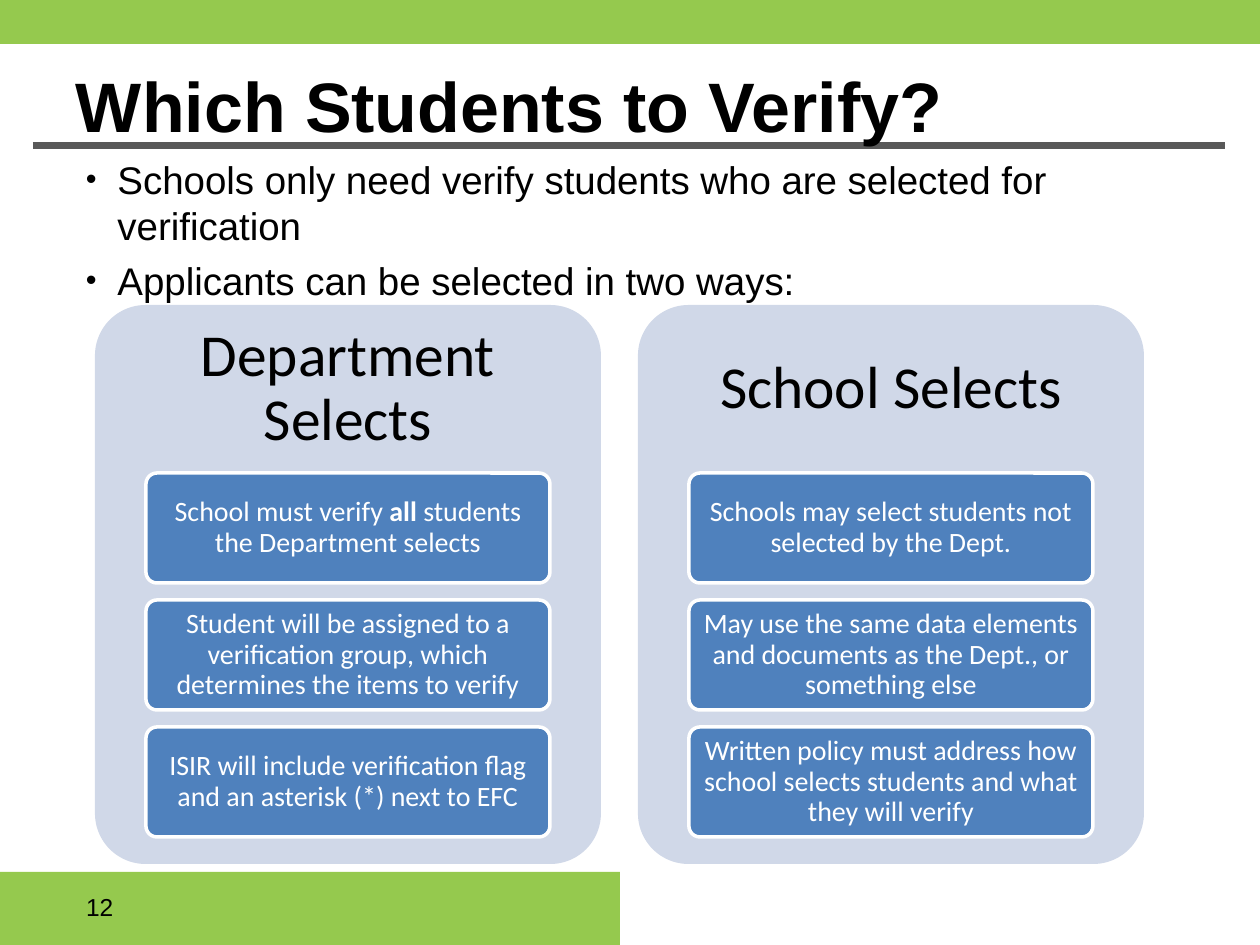
from lxml import etree
from pptx import Presentation
from pptx.dml.color import RGBColor
from pptx.enum.shapes import MSO_CONNECTOR, MSO_SHAPE
from pptx.enum.text import MSO_ANCHOR as ANCHOR, PP_ALIGN as ALIGN
from pptx.oxml.ns import qn
from pptx.util import Emu, Pt

SCALE = 914400 / 126
GREEN = RGBColor(0x95, 0xC9, 0x4E)
GRAY = RGBColor(0x59, 0x59, 0x59)
PALE = RGBColor(0xD0, 0xD8, 0xE8)
BLUE = RGBColor(0x4F, 0x81, 0xBD)
WHITE = RGBColor(0xFF, 0xFF, 0xFF)
BLACK = RGBColor(0, 0, 0)

prs = Presentation()
prs.slide_width, prs.slide_height = Emu(9144000), Emu(6858000)
s = prs.slides.add_slide(prs.slide_layouts[6])


def add_box(box, kind=None, fill=None, line=None):
    at = [Emu(round(v * SCALE)) for v in box]
    if kind is None:
        return s.shapes.add_textbox(*at)
    sp = s.shapes.add_shape(kind, *at)
    sp.shadow.inherit = False
    sp.fill.solid()
    sp.fill.fore_color.rgb = fill
    if line is None:
        sp.line.fill.background()
    else:
        sp.line.color.rgb = line
        sp.line.width = Pt(2)
    if kind == MSO_SHAPE.ROUNDED_RECTANGLE:
        sp.adjustments[0] = 0.1
    return sp


def write(sp, paragraphs, size, font, color, insets, anchor, align=ALIGN.LEFT, spacing=1.0):
    tf = sp.text_frame
    tf.word_wrap = True
    tf.vertical_anchor = anchor
    tf.margin_left, tf.margin_top, tf.margin_right, tf.margin_bottom = [
        Emu(round(v * SCALE)) for v in insets]
    for i, text in enumerate(paragraphs):
        p = tf.paragraphs[0] if i == 0 else tf.add_paragraph()
        p.alignment = align
        p.line_spacing = spacing
        for j, part in enumerate(text.split("**")):
            r = p.add_run()
            r.text = part
            r.font.size = Pt(size)
            r.font.name = font
            r.font.color.rgb = color
            r.font.bold = j % 2 == 1
    return tf


add_box((0, 872, 620, 73), MSO_SHAPE.RECTANGLE, GREEN)
add_box((-2, 0, 1264, 44), MSO_SHAPE.RECTANGLE, GREEN)

rule = s.shapes.add_connector(
    MSO_CONNECTOR.STRAIGHT, *[Emu(round(v * SCALE)) for v in (33, 146, 1225, 146)])
rule.line.color.rgb = GRAY
rule.line.width = Pt(4)
etree.SubElement(rule._element.spPr, qn("a:effectLst"))

title = add_box((63, 57, 1178, 90))
tf = write(title, ["Which Students to Verify?"], 40, "Arial", BLACK, (13, 6, 13, 0), ANCHOR.BOTTOM)
tf.paragraphs[0].runs[0].font.bold = True

body = add_box((73, 147, 1134, 624))
tf = write(body, ["Schools only need verify students who are selected for verification",
                  "Applicants can be selected in two ways:"],
           22, "Arial", BLACK, (13, 9, 13, 6), ANCHOR.TOP)
for i, p in enumerate(tf.paragraphs):
    if i:
        p.space_before = Pt(5)
    pPr = p._p.get_or_add_pPr()
    pPr.set("marL", "228600")
    pPr.set("indent", "-228600")
    etree.SubElement(pPr, qn("a:buSzPct")).set("val", "80000")
    etree.SubElement(pPr, qn("a:buFont")).set("typeface", "Arial")
    etree.SubElement(pPr, qn("a:buChar")).set("char", "•")

number = add_box((73, 882, 294, 50))
write(number, ["12"], 14, "Arial", BLACK, (13, 6, 13, 6), ANCHOR.MIDDLE)

columns = [
    ("Department Selects", [
        "School must verify **all** students the Department selects",
        "Student will be assigned to a verification group, which determines the items to verify",
        "ISIR will include verification flag and an asterisk (*) next to EFC"]),
    ("School Selects", [
        "Schools may select students not selected by the Dept.",
        "May use the same data elements and documents as the Dept., or something else",
        "Written policy must address how school selects students and what they will verify"]),
]
for col, (heading, items) in enumerate(columns):
    x = 95 + col * 543
    add_box((x, 305, 506, 559), MSO_SHAPE.ROUNDED_RECTANGLE, PALE)
    write(add_box((x, 305, 506, 168)), [heading], 34, "Calibri", BLACK,
          (18, 18, 18, 18), ANCHOR.MIDDLE, ALIGN.CENTER, 0.9)
    for row, item in enumerate(items):
        card = add_box((x + 51, 473 + row * 127, 404, 110),
                       MSO_SHAPE.ROUNDED_RECTANGLE, BLUE, WHITE)
        write(card, [item], 16, "Calibri", WHITE, (8, 7, 8, 7),
              ANCHOR.MIDDLE, ALIGN.CENTER, 0.9)

prs.save("out.pptx")
